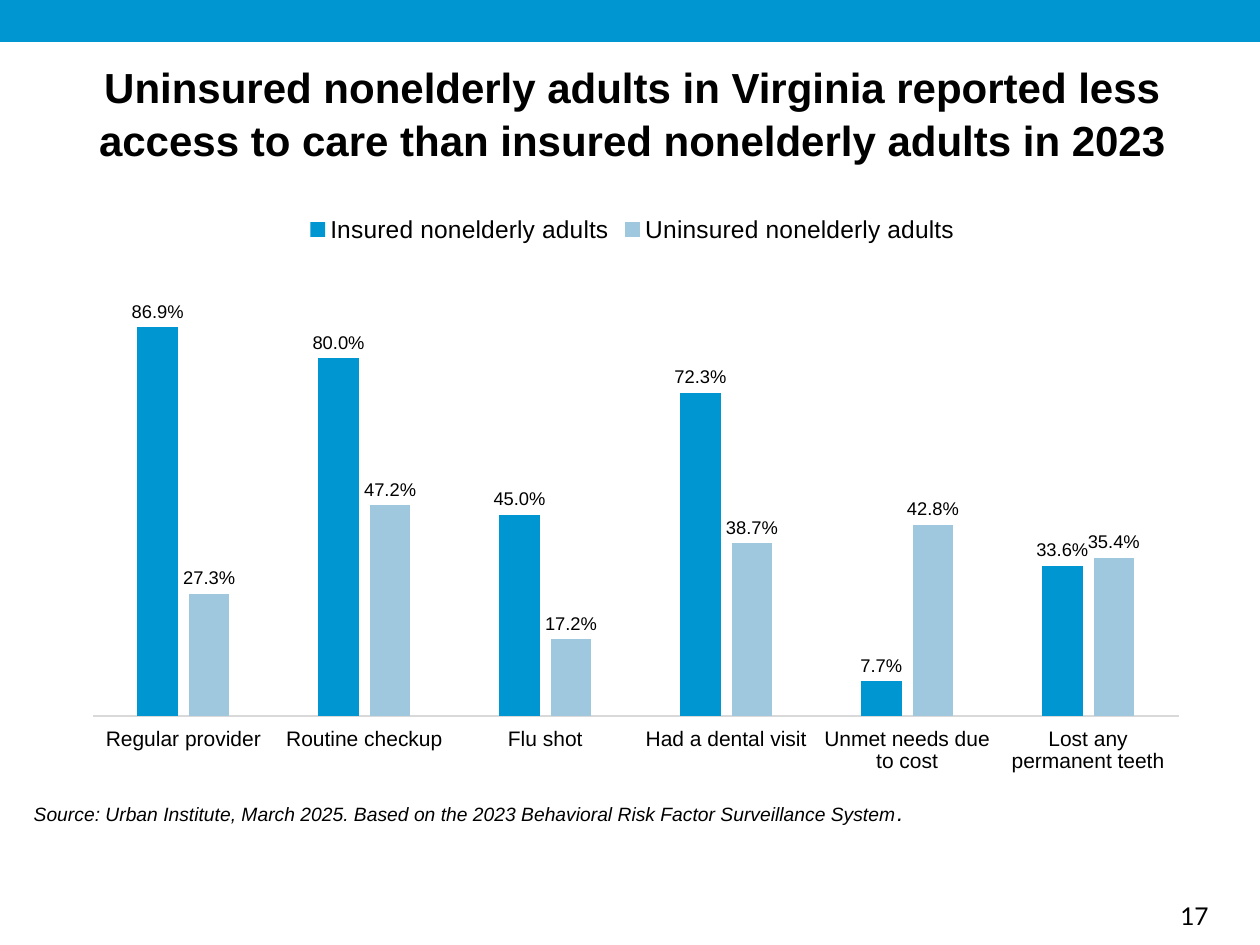
from dataclasses import dataclass

from lxml.etree import SubElement
from pptx import Presentation
from pptx.chart.data import CategoryChartData
from pptx.dml.color import RGBColor
from pptx.enum.chart import (XL_CHART_TYPE, XL_LABEL_POSITION,
                             XL_LEGEND_POSITION, XL_TICK_LABEL_POSITION,
                             XL_TICK_MARK)
from pptx.enum.shapes import MSO_SHAPE
from pptx.enum.text import MSO_ANCHOR, PP_ALIGN
from pptx.oxml.ns import qn
from pptx.util import Pt

COLORS = {"blue": "0096D2", "light_blue": "9FC7DE",
          "text": "000000", "axis": "D9D9D9"}
PERCENT = "0.0%"
MARGIN, CONTENT_WIDTH = 40.3, 642.2


@dataclass
class Group:
    name: str
    shares: tuple[float, ...]
    color: str


MEASURES = ("Regular provider", "Routine checkup", "Flu shot",
            "Had a dental visit", "Unmet needs due to cost",
            "Lost any permanent teeth")
GROUPS = (
    Group("Insured nonelderly adults",
          (0.869, 0.8, 0.45, 0.723, 0.077, 0.336), "blue"),
    Group("Uninsured nonelderly adults",
          (0.273, 0.472, 0.172, 0.387, 0.428, 0.354), "light_blue"),
)


def rgb(color: str) -> RGBColor:
    return RGBColor.from_string(COLORS[color])


def style_font(font, size: float, name: str = "Arial",
               bold: bool = False, italic: bool = False) -> None:
    font.size, font.name = Pt(size), name
    font.bold, font.italic = bold, italic
    font.color.rgb = rgb("text")


def add_text(paragraph, text: str, **font_format) -> None:
    run = paragraph.add_run()
    run.text = text
    style_font(run.font, **font_format)


def add_box(slide, left: float, top: float, width: float, height: float):
    """Add a wrapping text box and return its first paragraph."""
    box = slide.shapes.add_textbox(Pt(left), Pt(top), Pt(width), Pt(height))
    box.text_frame.word_wrap = True
    return box.text_frame.paragraphs[0]


def set_plot_layout(chart, x: float, y: float, w: float, h: float) -> None:
    """Fix the inner plot area as fractions of the chart."""
    plot_area = chart.plots[0]._element.getparent()
    layout = plot_area.find(qn("c:layout"))
    if layout is None:
        layout = SubElement(plot_area, qn("c:layout"))
        plot_area.insert(0, layout)
    manual = SubElement(layout, qn("c:manualLayout"))
    settings = (("layoutTarget", "inner"), ("xMode", "edge"),
                ("yMode", "edge"), ("x", x), ("y", y), ("w", w), ("h", h))
    for tag, value in settings:
        SubElement(manual, qn(f"c:{tag}")).set("val", str(value))


def add_access_chart(slide) -> None:
    data = CategoryChartData(number_format=PERCENT)
    data.categories = MEASURES
    for group in GROUPS:
        data.add_series(group.name, group.shares)
    chart = slide.shapes.add_chart(
        XL_CHART_TYPE.COLUMN_CLUSTERED, Pt(MARGIN), Pt(115.2),
        Pt(CONTENT_WIDTH), Pt(334.8), data).chart
    chart.has_title = False
    style_font(chart.font, 10)

    chart.has_legend = True
    chart.legend.position = XL_LEGEND_POSITION.TOP
    chart.legend.include_in_layout = False
    style_font(chart.legend.font, 14)

    measures = chart.category_axis
    measures.major_tick_mark = measures.minor_tick_mark = XL_TICK_MARK.NONE
    measures.tick_label_position = XL_TICK_LABEL_POSITION.LOW
    measures.format.line.color.rgb = rgb("axis")
    measures.format.line.width = Pt(0.75)
    style_font(measures.tick_labels.font, 12)

    shares = chart.value_axis
    shares.minimum_scale, shares.maximum_scale = 0, 1
    shares.has_major_gridlines = False
    shares.tick_labels.number_format = PERCENT
    shares.visible = False

    plot = chart.plots[0]
    plot.gap_width, plot.overlap = 219, -27
    plot.vary_by_categories = False
    for group, series in zip(GROUPS, plot.series):
        series.format.fill.solid()
        series.format.fill.fore_color.rgb = rgb(group.color)
        labels = series.data_labels
        labels.show_value = True
        labels.number_format = PERCENT
        labels.number_format_is_linked = False
        labels.position = XL_LABEL_POSITION.OUTSIDE_END
        style_font(labels.font, 10.5)
    set_plot_layout(chart, 0.02, 0.115, 0.966, 0.763)


def add_title(slide) -> None:
    title = slide.shapes.title
    title.left, title.top = Pt(MARGIN), Pt(30.2)
    title.width, title.height = Pt(CONTENT_WIDTH), Pt(65.5)
    title.text_frame.word_wrap = True
    title.text_frame.vertical_anchor = MSO_ANCHOR.TOP
    heading = title.text_frame.paragraphs[0]
    heading.alignment = PP_ALIGN.CENTER
    heading.line_spacing = 1.05
    add_text(heading, "Uninsured nonelderly adults in Virginia reported less "
             "access to care than insured nonelderly adults in 2023",
             size=24, bold=True)


def main() -> None:
    deck = Presentation()
    deck.slide_width, deck.slide_height = Pt(720), Pt(540)
    slide = deck.slides.add_slide(deck.slide_layouts[5])

    banner = slide.shapes.add_shape(MSO_SHAPE.RECTANGLE, 0, 0,
                                    deck.slide_width, Pt(24))
    banner.shadow.inherit = False
    banner.fill.solid()
    banner.fill.fore_color.rgb = rgb("blue")
    banner.line.fill.background()

    page_number = add_box(slide, 667.4, 511.2, 52.6, 24.5)
    add_text(page_number, "17", size=14, name="Lato")

    add_access_chart(slide)
    add_title(slide)

    source = add_box(slide, 12.2, 452.9, 684, 23)
    add_text(source, "Source: Urban Institute, March 2025. Based on the 2023 "
             "Behavioral Risk Factor Surveillance System",
             size=11, italic=True)
    add_text(source, ".", size=13, italic=True)
    deck.save("out.pptx")


if __name__ == "__main__":
    main()
